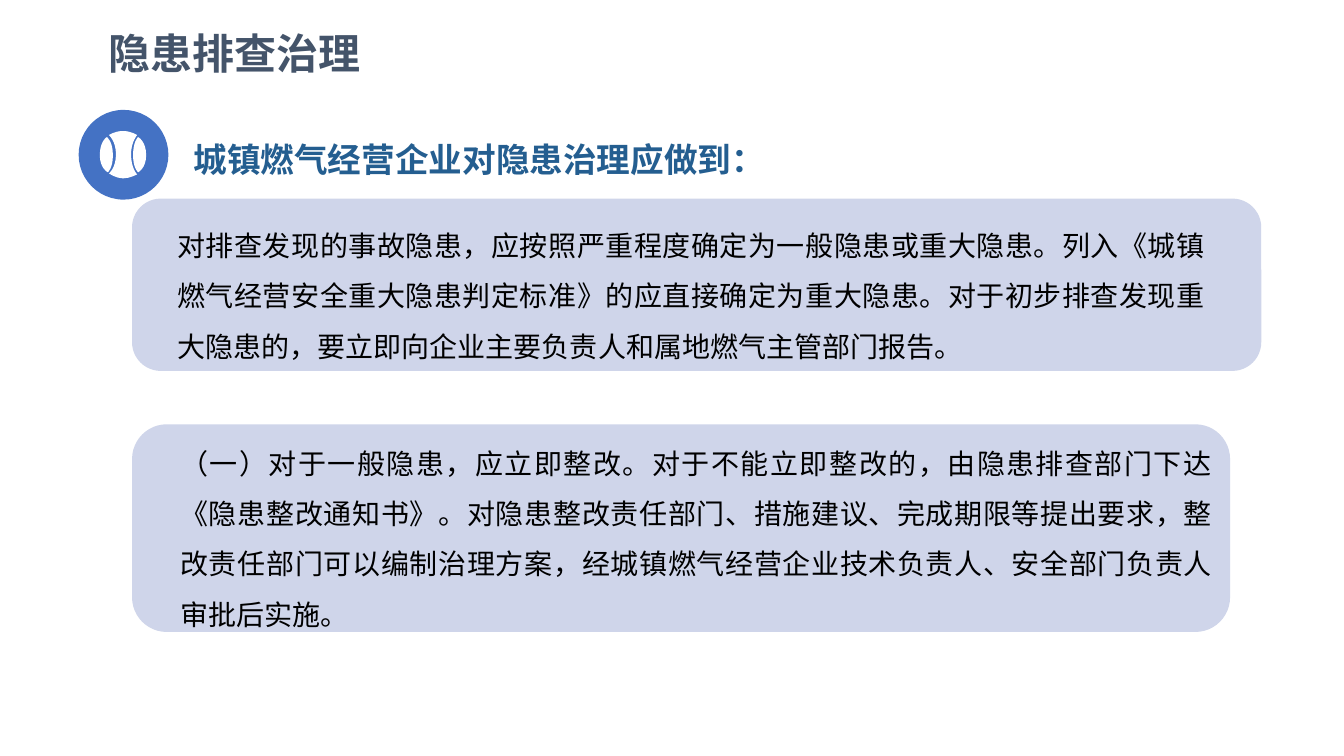
from lxml import etree
from pptx import Presentation
from pptx.dml.color import RGBColor
from pptx.enum.shapes import MSO_SHAPE
from pptx.enum.text import MSO_ANCHOR, MSO_AUTO_SIZE, PP_ALIGN
from pptx.oxml.ns import qn
from pptx.util import Inches, Pt

ROUNDED, OVAL = MSO_SHAPE.ROUNDED_RECTANGLE, MSO_SHAPE.OVAL
TOP, MIDDLE = MSO_ANCHOR.TOP, MSO_ANCHOR.MIDDLE
LEFT, JUSTIFY = PP_ALIGN.LEFT, PP_ALIGN.JUSTIFY
NO_FIT = MSO_AUTO_SIZE.NONE

COLORS = {
    "title": "44546A",
    "heading": "245E90",
    "body": "000000",
    "panel": "CFD5EA",
    "badge": "4472C4",
    "ball": "FFFFFF",
}
CJK_FONT = "Noto Sans CJK SC"
BODY_FONT = "Arial"
TITLE_LAYOUT = 5

TITLE = "隐患排查治理"
HEADING = "城镇燃气经营企业对隐患治理应做到："
# Panel position, text position, text
SECTIONS = [
    ((1.31, 1.97, 11.2, 1.71), (1.66, 2.05, 10.39, 1.61),
     "对排查发现的事故隐患，应按照严重程度确定为一般隐患或重大隐患。"
     "列入《城镇燃气经营安全重大隐患判定标准》的应直接确定为重大隐患。"
     "对于初步排查发现重大隐患的，要立即向企业主要负责人和属地燃气主管部门报告。"),
    ((1.31, 4.21, 10.89, 2.06), (1.69, 4.21, 10.43, 2.07),
     "（一）对于一般隐患，应立即整改。对于不能立即整改的，由隐患排查部门下达"
     "《隐患整改通知书》。对隐患整改责任部门、措施建议、完成期限等提出要求，"
     "整改责任部门可以编制治理方案，经城镇燃气经营企业技术负责人、"
     "安全部门负责人审批后实施。"),
]

# Ball outlines: a start point, then curves of two controls and an end
BALL_FRAME = (0.92, 1.23, 0.61, 0.61)
BALL_OUTLINES = [
    [
        (1.3, 1.53),
        (1.3, 1.41), (1.36, 1.34), (1.36, 1.34),
        (1.36, 1.34), (1.3, 1.3), (1.22, 1.3),
        (1.14, 1.3), (1.08, 1.34), (1.08, 1.34),
        (1.08, 1.34), (1.15, 1.4), (1.15, 1.53),
        (1.15, 1.67), (1.08, 1.72), (1.08, 1.72),
        (1.08, 1.72), (1.15, 1.77), (1.22, 1.77),
        (1.29, 1.77), (1.36, 1.73), (1.36, 1.73),
        (1.36, 1.73), (1.3, 1.67), (1.3, 1.53),
    ],
    [
        (1.06, 1.36),
        (1.06, 1.36), (0.99, 1.4), (0.99, 1.54),
        (0.99, 1.67), (1.07, 1.71), (1.07, 1.71),
        (1.07, 1.71), (1.12, 1.67), (1.12, 1.54),
        (1.12, 1.4), (1.06, 1.36), (1.06, 1.36),
    ],
    [
        (1.37, 1.36),
        (1.37, 1.36), (1.32, 1.4), (1.32, 1.54),
        (1.32, 1.67), (1.37, 1.71), (1.37, 1.71),
        (1.37, 1.71), (1.45, 1.67), (1.45, 1.54),
        (1.45, 1.4), (1.37, 1.36), (1.37, 1.36),
    ],
]


def color(name):
    return RGBColor.from_string(COLORS[name])


def place_shape(shape, place):
    shape.left, shape.top, shape.width, shape.height = map(Inches, place)


def paint(shape, fill):
    shape.shadow.inherit = False
    shape.fill.solid()
    shape.fill.fore_color.rgb = color(fill)
    shape.line.fill.background()


def add_filled_shape(page, kind, place, fill):
    shape = page.shapes.add_shape(kind, *map(Inches, place))
    paint(shape, fill)
    return shape


def write_text(box, text, size, ink, spacing, font=CJK_FONT, bold=False,
               align=LEFT, anchor=TOP, insets=(0.1, 0.05, 0.1, 0.05)):
    frame = box.text_frame
    frame.text = text
    frame.word_wrap = True
    frame.auto_size = NO_FIT
    frame.vertical_anchor = anchor
    (frame.margin_left, frame.margin_top,
     frame.margin_right, frame.margin_bottom) = map(Inches, insets)
    para = frame.paragraphs[0]
    para.alignment = align
    para.line_spacing = spacing
    para.space_before = Pt(0)
    span = para.runs[0]
    span.font.name = font
    span.font.size = Pt(size)
    span.font.bold = bold
    span.font.color.rgb = color(ink)
    # Chinese characters take the East Asian typeface
    east_asian = etree.Element(qn("a:ea"), typeface=CJK_FONT)
    span.font._element.find(qn("a:latin")).addnext(east_asian)


def add_text(page, place, text, **style):
    box = page.shapes.add_textbox(*map(Inches, place))
    write_text(box, text, **style)


def add_title(page):
    title = page.shapes.title
    place_shape(title, (0.94, -0.08, 12.29, 1))
    write_text(title, TITLE, size=30, ink="title", spacing=1.4, bold=True,
               anchor=MIDDLE, insets=(0.14, 0.14, 0.06, 0.14))


def bend_segments(shape):
    """Join every three straight segments into one cubic curve."""
    segments = list(shape._element.iter(qn("a:lnTo")))
    for i in range(0, len(segments), 3):
        curve = etree.Element(qn("a:cubicBezTo"))
        segments[i].addprevious(curve)
        for segment in segments[i:i + 3]:
            curve.append(segment[0])
            segment.getparent().remove(segment)


def fit_frame(shape, place):
    """Give the outline a wider frame without moving its points."""
    old_left, old_top = shape.left, shape.top
    place_shape(shape, place)
    for point in shape._element.iter(qn("a:pt")):
        point.set("x", str(int(point.get("x")) + old_left - shape.left))
        point.set("y", str(int(point.get("y")) + old_top - shape.top))
    for outline in shape._element.iter(qn("a:path")):
        outline.set("w", str(shape.width))
        outline.set("h", str(shape.height))


def add_ball(page):
    builder = page.shapes.build_freeform()
    for number, outline in enumerate(BALL_OUTLINES):
        start, *points = [(Inches(x), Inches(y)) for x, y in outline]
        if number == 0:
            builder = page.shapes.build_freeform(*start)
        else:
            builder.move_to(*start)
        builder.add_line_segments(points, close=True)
    ball = builder.convert_to_shape()
    bend_segments(ball)
    fit_frame(ball, BALL_FRAME)
    paint(ball, "ball")


def add_section(page, panel_place, text_place, text):
    panel = add_filled_shape(page, ROUNDED, panel_place, "panel")
    panel.adjustments[0] = 0.167
    add_text(page, text_place, text, size=20, ink="body", spacing=1.5,
             font=BODY_FONT, align=JUSTIFY)


def main():
    deck = Presentation()
    deck.slide_width, deck.slide_height = Inches(13.33), Inches(7.5)
    page = deck.slides.add_slide(deck.slide_layouts[TITLE_LAYOUT])
    add_title(page)

    # Text panels
    for section in SECTIONS:
        add_section(page, *section)

    # Heading with its ball badge
    add_filled_shape(page, OVAL, (0.78, 1.09, 0.89, 0.89), "badge")
    add_ball(page)
    add_text(page, (1.8, 1.23, 10, 0.62), HEADING, size=24, ink="heading",
             spacing=1.2, bold=True, anchor=MIDDLE,
             insets=(0.12, 0.06, 0.12, 0.06))

    deck.save("out.pptx")


if __name__ == "__main__":
    main()
